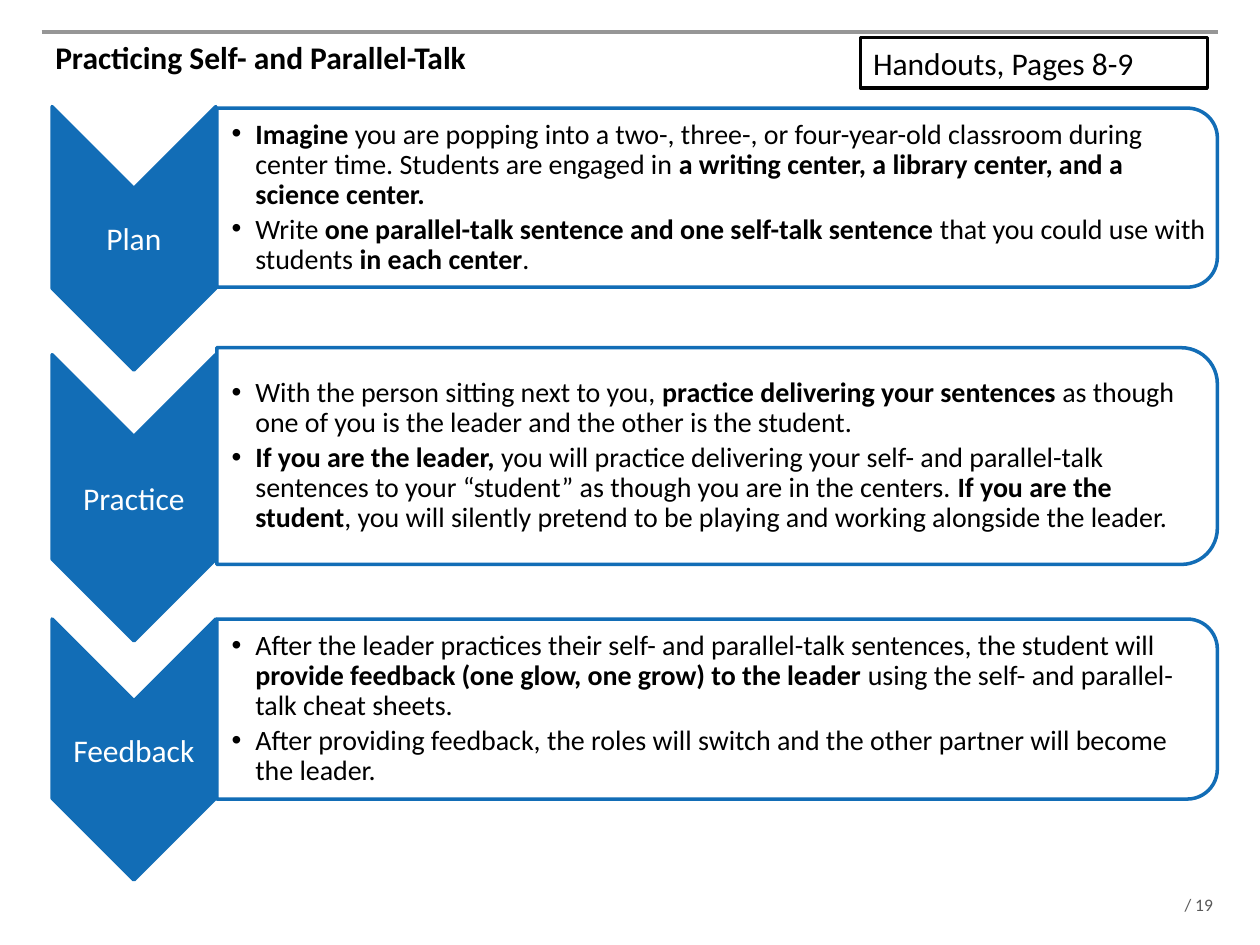
"""Build a slide with three practice steps, each a chevron beside a bulleted panel."""
from lxml import etree
from pptx import Presentation
from pptx import util as u
from pptx.dml.color import RGBColor
from pptx.enum import shapes, text
from pptx.oxml.ns import qn

COLORS = {"blue": "126DB6", "white": "FFFFFF", "black": "000000",
          "rule": "969696", "number": "595959"}
CHEVRON_LEFT, CHEVRON_WIDTH = 1.05, 3.3
PANEL_LEFT, PANEL_WIDTH, TEXT_WIDTH = 4.37, 20.17, 19.99
STEPS = [
    ("Plan", (2.15, 5.31), (2.18, 3.61), [
        "**Imagine** you are popping into a two-, three-, or four-year-old classroom "
        "during center time. Students are engaged in **a writing center, a library "
        "center, and a science center.**",
        "Write **one parallel-talk sentence and one self-talk sentence **that you "
        "could use with students **in each center**."]),
    ("Practice", (7.15, 5.77), (7.01, 4.37), [
        "With the person sitting next to you,** practice delivering your sentences "
        "**as though one of you is the leader and the other is the student.",
        "**If you are the leader,** you will practice delivering your self- and "
        "parallel-talk sentences to your “student” as though you are in the centers. "
        "**If you are the student**, you will silently pretend to be playing and "
        "working alongside the leader."]),
    ("Feedback", (12.48, 5.26), (12.48, 3.63), [
        "After the leader practices their self- and parallel-talk sentences, the "
        "student will **provide feedback (one glow, one grow) to the leader **using "
        "the self- and parallel-talk cheat sheets.",
        "After providing feedback, the roles will switch and the other partner will "
        "become the leader."]),
]


class Slide:
    """Hold the style and the current page, and draw each kind of element."""

    def __init__(self, page, font="Calibri"):
        self.page = page
        self.font = font

    def color(self, name):
        return RGBColor.from_string(COLORS[name])

    def style(self, font, size, color, bold=False):
        font.name, font.size, font.bold = self.font, u.Pt(size), bold
        font.color.rgb = self.color(color)

    def place(self, box, left, top, width, height):
        box.left, box.top = u.Cm(left), u.Cm(top)
        box.width, box.height = u.Cm(width), u.Cm(height)

    def frame(self, box, anchor, insets=None):
        frame = box.text_frame
        frame.word_wrap = True
        frame.auto_size = text.MSO_AUTO_SIZE.NONE
        frame.vertical_anchor = anchor
        if insets:
            (frame.margin_left, frame.margin_top,
             frame.margin_right, frame.margin_bottom) = map(u.Cm, insets)
        return frame

    def title(self, words, *area):
        box = self.page.shapes.title
        self.place(box, *area)
        frame = self.frame(box, text.MSO_ANCHOR.TOP)
        frame.text = words
        para = frame.paragraphs[0]
        para.alignment = text.PP_ALIGN.LEFT
        self.style(para.runs[0].font, 18, "black", True)

    def rule(self, left, right, y):
        line = self.page.shapes.add_connector(
            shapes.MSO_CONNECTOR.STRAIGHT, u.Cm(left), u.Cm(y), u.Cm(right), u.Cm(y))
        line.line.color.rgb = self.color("rule")
        line.line.width = u.Pt(2)
        etree.SubElement(line._element.spPr, qn("a:effectLst"))

    def shape(self, kind, fill, line, left, top, width, height):
        box = self.page.shapes.add_shape(
            kind, u.Cm(left), u.Cm(top), u.Cm(width), u.Cm(height))
        box.shadow.inherit = False
        box.fill.solid()
        box.fill.fore_color.rgb = self.color(fill)
        box.line.color.rgb = self.color(line)
        box.line.width = u.Pt(2)
        return box

    def turned_shape(self, kind, fill, left, top, width, height):
        shift = (width - height) / 2
        box = self.shape(kind, fill, "blue", left + shift, top - shift, height, width)
        box.rotation = 90
        return box

    def label(self, words, size, color, area, align=text.PP_ALIGN.LEFT,
              anchor=text.MSO_ANCHOR.TOP, insets=(0, 0, 0, 0)):
        box = self.page.shapes.add_textbox(*map(u.Cm, area))
        frame = self.frame(box, anchor, insets)
        frame.text = words
        para = frame.paragraphs[0]
        para.alignment = align
        self.style(para.runs[0].font, size, color)

    def callout(self, words, *area):
        box = self.shape(shapes.MSO_SHAPE.RECTANGLE, "white", "black", *area)
        frame = self.frame(box, text.MSO_ANCHOR.TOP)
        frame.text = words
        para = frame.paragraphs[0]
        para.alignment = text.PP_ALIGN.LEFT
        self.style(para.runs[0].font, 18, "black")

    def bullets(self, items, *area):
        box = self.page.shapes.add_textbox(*map(u.Cm, area))
        frame = self.frame(box, text.MSO_ANCHOR.MIDDLE, (0.3, 0.03, 0.03, 0.03))
        for index, item in enumerate(items):
            para = frame.add_paragraph() if index else frame.paragraphs[0]
            para.level = 1
            para.line_spacing, para.space_after = 0.9, u.Pt(2.5)
            properties = para._p.get_or_add_pPr()
            properties.set("marL", str(u.Cm(0.48)))
            properties.set("indent", str(u.Cm(-0.48)))
            etree.SubElement(properties, qn("a:buFont"), typeface="Arial")
            etree.SubElement(properties, qn("a:buChar"), char="•")
            for part, words in enumerate(item.split("**")):
                if words:
                    span = para.add_run()
                    span.text = words
                    self.style(span.font, 16, "black", part % 2 == 1)

    def step(self, name, chevron, panel, items):
        top, height = chevron
        self.turned_shape(shapes.MSO_SHAPE.CHEVRON, "blue",
                          CHEVRON_LEFT, top, CHEVRON_WIDTH, height)
        area = (CHEVRON_LEFT, top + CHEVRON_WIDTH / 2,
                CHEVRON_WIDTH, height - CHEVRON_WIDTH)
        self.label(name, 18, "white", area, text.PP_ALIGN.CENTER,
                   text.MSO_ANCHOR.MIDDLE, (0.03, 0.03, 0.03, 0.03))
        top, height = panel
        box = self.turned_shape(shapes.MSO_SHAPE.ROUND_2_SAME_RECTANGLE, "white",
                                PANEL_LEFT, top, PANEL_WIDTH, height)
        fill = box._element.spPr.find(qn("a:solidFill"))
        etree.SubElement(fill[0], qn("a:alpha"), val="90000")
        self.bullets(items, PANEL_LEFT, top, TEXT_WIDTH, height)


def main():
    deck = Presentation()
    deck.slide_width, deck.slide_height = u.Cm(25.4), u.Cm(19.05)
    slide = Slide(deck.slides.add_slide(deck.slide_layouts[5]))
    slide.label(" / 19", 10, "number", (23.8, 18.03, 1.6, 0.43))
    slide.rule(0.84, 24.56, 0.64)
    slide.title("Practicing Self- and Parallel-Talk", 0.86, 0.64, 23.67, 2.34)
    for step in STEPS:
        slide.step(*step)
    slide.callout("Handouts, Pages 8-9", 17.35, 0.76, 6.99, 1.02)
    deck.save("out.pptx")


if __name__ == "__main__":
    main()
